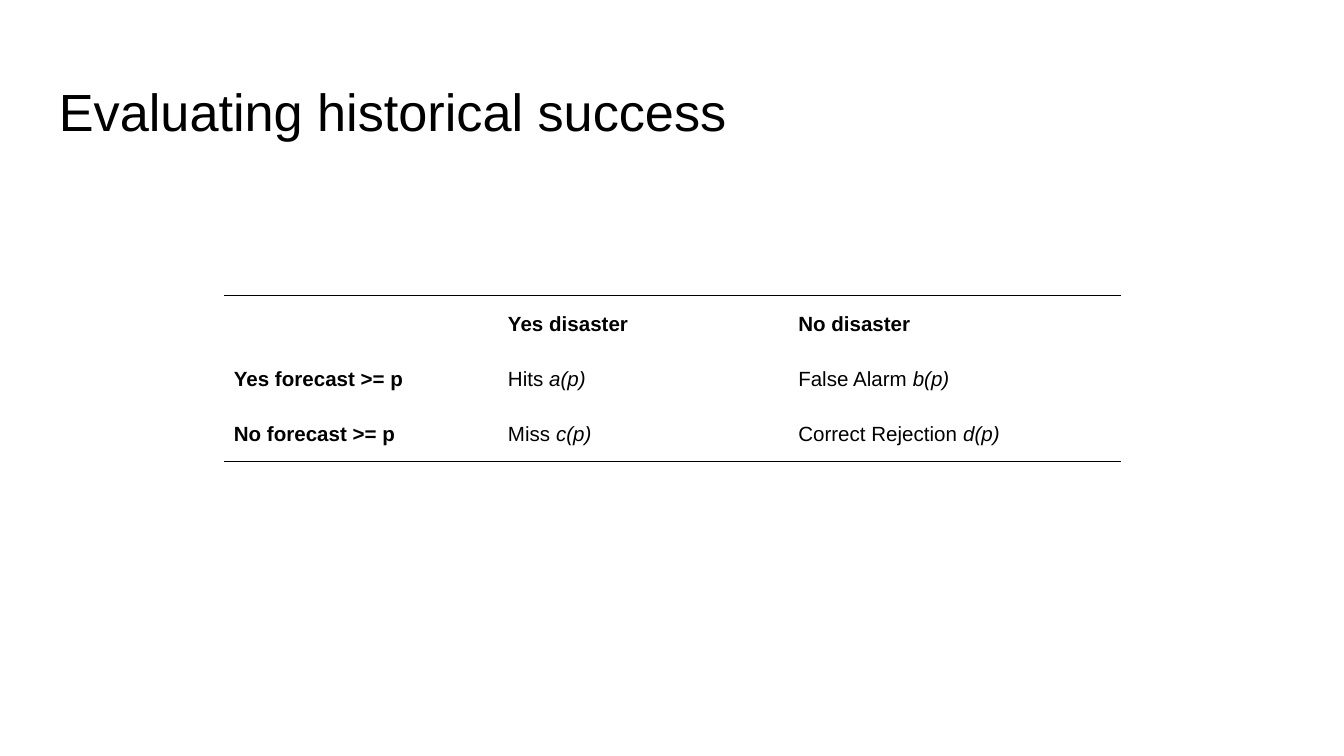
from pptx import Presentation
from pptx.dml.color import RGBColor as RGB
from pptx.enum.text import MSO_ANCHOR as Anchor
from pptx.oxml import parse_xml
from pptx.oxml.ns import nsdecls
from pptx.util import Inches, Pt

COLORS = {"ink": "000000"}
PLAIN = "{2D5ABB26-0587-4C30-8999-92F81FD0307C}"  # table style: no fill, no grid


def write(frame, *parts, size=11, bold=False, spacing=None):
    """Fill the first paragraph; every second part is italic."""
    para = frame.paragraphs[0]
    para.line_spacing = spacing
    para.font.size = Pt(size)
    for i, part in enumerate(parts):
        run = para.add_run()
        run.text = part
        font = run.font
        font.name = "Arial"
        font.size = Pt(size)
        font.bold = bold
        font.italic = i % 2 == 1
        font.color.rgb = RGB.from_string(COLORS["ink"])


def rule(cell, side):
    """Draw a 1 pt line on one side of a cell."""
    line = parse_xml(
        f'<a:{side} {nsdecls("a")} w="12700"><a:solidFill>'
        f'<a:srgbClr val="{COLORS["ink"]}"/></a:solidFill></a:{side}>'
    )
    cell._tc.get_or_add_tcPr().insert(0, line)


# Widescreen slide, 16:9
deck = Presentation()
deck.slide_width, deck.slide_height = Inches(10), Inches(10 * 9 / 16)
slide = deck.slides.add_slide(deck.slide_layouts[6])

# Title
title = slide.shapes.add_textbox(Inches(0.34), Inches(0.49), Inches(9.32), Inches(0.63))
frame = title.text_frame
frame.word_wrap = True
frame.margin_left = frame.margin_right = Inches(0.1)
frame.margin_top = frame.margin_bottom = Inches(0.1)
write(frame, "Evaluating historical success", size=28)

# Contingency table: each cell holds plain text, then an italic symbol
rows = [
    [(), ("Yes disaster",), ("No disaster",)],
    [("Yes forecast >= p",), ("Hits ", "a(p)"), ("False Alarm ", "b(p)")],
    [("No forecast >= p",), ("Miss ", "c(p)"), ("Correct Rejection ", "d(p)")],
]
widths = [2.04, 2.16, 2.47]
height = 0.39
table = slide.shapes.add_table(
    len(rows), len(widths), Inches(1.67), Inches(2.2),
    Inches(sum(widths)), Inches(height * len(rows)),
).table
table.first_row = table.horz_banding = False
table._tbl.tblPr[0].text = PLAIN
for col, width in zip(table.columns, widths):
    col.width = Inches(width)

for r, row in enumerate(rows):
    table.rows[r].height = Inches(height)
    for c, parts in enumerate(row):
        cell = table.cell(r, c)
        cell.fill.background()
        cell.vertical_anchor = Anchor.TOP
        cell.margin_left = cell.margin_right = Inches(0.07)
        cell.margin_top = cell.margin_bottom = Inches(0.1)
        write(cell.text_frame, *parts, bold=r == 0 or c == 0, spacing=1.15)
        if r == 0:
            rule(cell, "lnT")
        if r == len(rows) - 1:
            rule(cell, "lnB")

deck.save("out.pptx")
